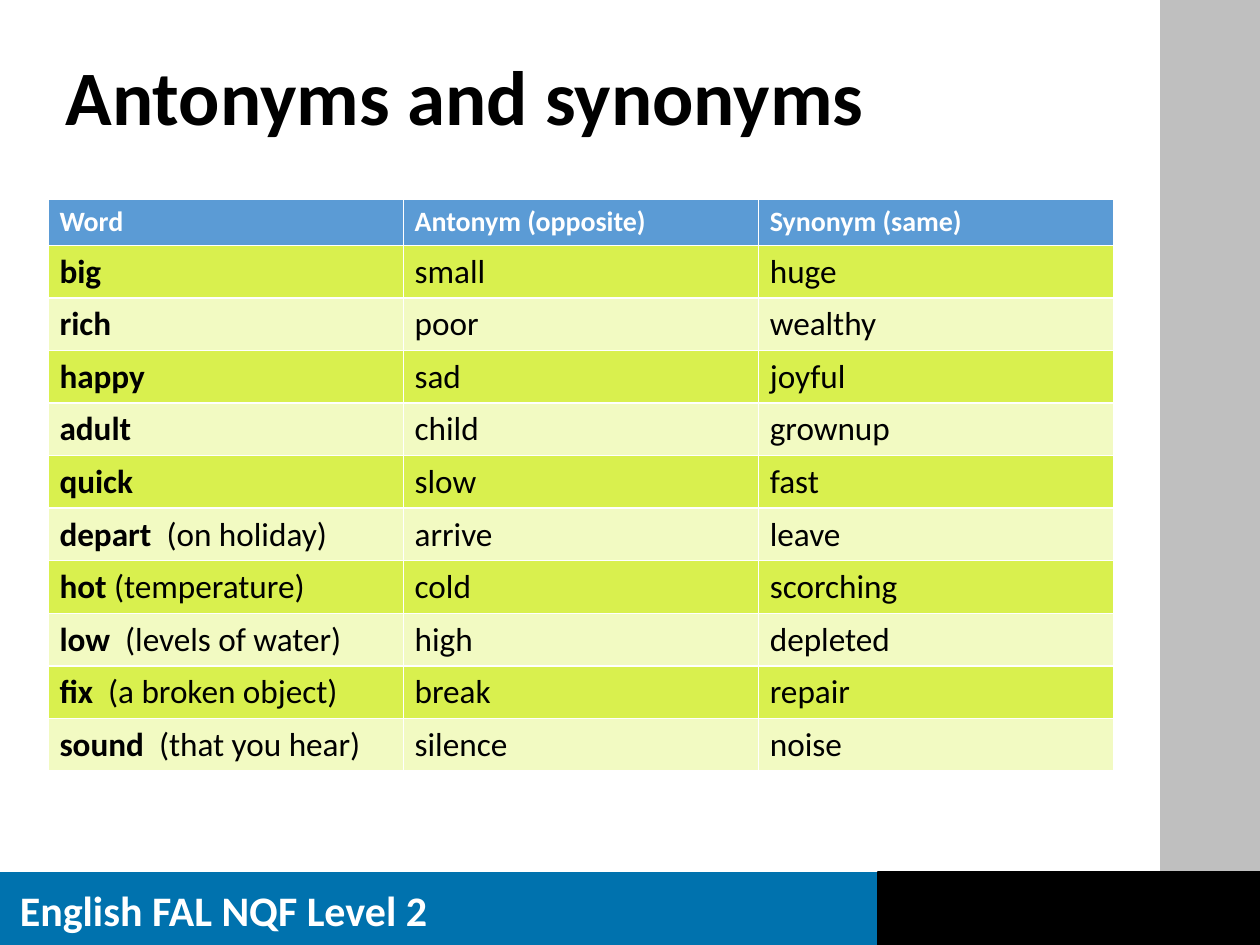
import pptx
import pptx.dml.color
import pptx.enum.shapes
import pptx.enum.text
import pptx.util
from pptx.util import Cm

FONT = "Calibri"
BLACK = "000000"
WHITE = "FFFFFF"
HEADER_FILL = "5B9BD5"
BAND_FILLS = ("D9F04E", "F2FAC2")

HEADINGS = ("Word", "Antonym (opposite)", "Synonym (same)")
WORDS = (
    ("big", "", "small", "huge"),
    ("rich", "", "poor", "wealthy"),
    ("happy", "", "sad", "joyful"),
    ("adult", "", "child", "grownup"),
    ("quick", "", "slow", "fast"),
    ("depart  ", "(on holiday)", "arrive", "leave"),
    ("hot ", "(temperature)", "cold", "scorching"),
    ("low  ", "(levels of water)", "high", "depleted"),
    ("fix  ", "(a broken object)", "break", "repair"),
    ("sound  ", "(that you hear)", "silence", "noise"),
)


def set_colour(target, value):
    target.rgb = pptx.dml.color.RGBColor.from_string(value)


def set_fill(target, value):
    target.fill.solid()
    set_colour(target.fill.fore_color, value)


def add_text(para, text, size=19, colour=BLACK, bold=False):
    span = para.add_run()
    span.text = text
    span.font.name = FONT
    span.font.size = pptx.util.Pt(size)
    span.font.bold = bold
    set_colour(span.font.color, colour)


def add_panel(page, left, top, width, height, colour):
    panel = page.shapes.add_shape(
        pptx.enum.shapes.MSO_SHAPE.RECTANGLE,
        Cm(left), Cm(top), Cm(width), Cm(height),
    )
    panel.shadow.inherit = False
    panel.line.fill.background()
    set_fill(panel, colour)
    return panel


def add_footer(page):
    add_panel(page, 0, 17.58, 25.4, 1.5, "0072AE")
    label_panel = add_panel(page, 17.7, 17.58, 7.7, 1.47, BLACK)
    set_colour(label_panel.line.color, BLACK)
    label_panel.line.width = pptx.util.Pt(1)
    box = page.shapes.add_textbox(Cm(0.15), Cm(17.7), Cm(9.53), Cm(1.27))
    box.text_frame.word_wrap = True
    add_text(box.text_frame.paragraphs[0], "English FAL NQF Level 2",
             size=24, colour=WHITE, bold=True)


def format_title(page, text):
    title = page.shapes.title
    title.left, title.top = Cm(1.07), Cm(1.02)
    title.width, title.height = Cm(21.97), Cm(2.01)
    title.text_frame.vertical_anchor = pptx.enum.text.MSO_ANCHOR.MIDDLE
    para = title.text_frame.paragraphs[0]
    para.alignment = pptx.enum.text.PP_ALIGN.LEFT
    para.line_spacing = 0.9
    add_text(para, text, size=44, bold=True)


def fill_cell(cell, colour):
    set_fill(cell, colour)
    cell.margin_left = cell.margin_right = Cm(0.23)
    return cell.text_frame.paragraphs[0]


def add_word_table(page):
    frame = page.shapes.add_table(
        len(WORDS) + 1, len(HEADINGS), Cm(0.97), Cm(4.01), Cm(21.48), Cm(11.44)
    )
    table = frame.table
    for column in table.columns:
        column.width = Cm(7.16)
    for row in table.rows:
        row.height = Cm(1.05)
    table.rows[0].height = Cm(0.94)

    for column_index, heading in enumerate(HEADINGS):
        para = fill_cell(table.cell(0, column_index), HEADER_FILL)
        add_text(para, heading, size=16, colour=WHITE, bold=True)

    for row_index, (word, hint, antonym, synonym) in enumerate(WORDS, start=1):
        colour = BAND_FILLS[(row_index - 1) % len(BAND_FILLS)]
        para = fill_cell(table.cell(row_index, 0), colour)
        add_text(para, word, bold=True)
        if hint:
            add_text(para, hint)
        for column_index, text in enumerate((antonym, synonym), start=1):
            add_text(fill_cell(table.cell(row_index, column_index), colour), text)


def main():
    deck = pptx.Presentation()
    deck.slide_width, deck.slide_height = Cm(25.4), Cm(19.05)
    page = deck.slides.add_slide(deck.slide_layouts.get_by_name("Title Only"))
    add_panel(page, 23.39, 0, 2.01, 19.02, "BFBFBF")
    add_footer(page)
    format_title(page, "Antonyms and synonyms")
    add_word_table(page)
    deck.save("out.pptx")


if __name__ == "__main__":
    main()
